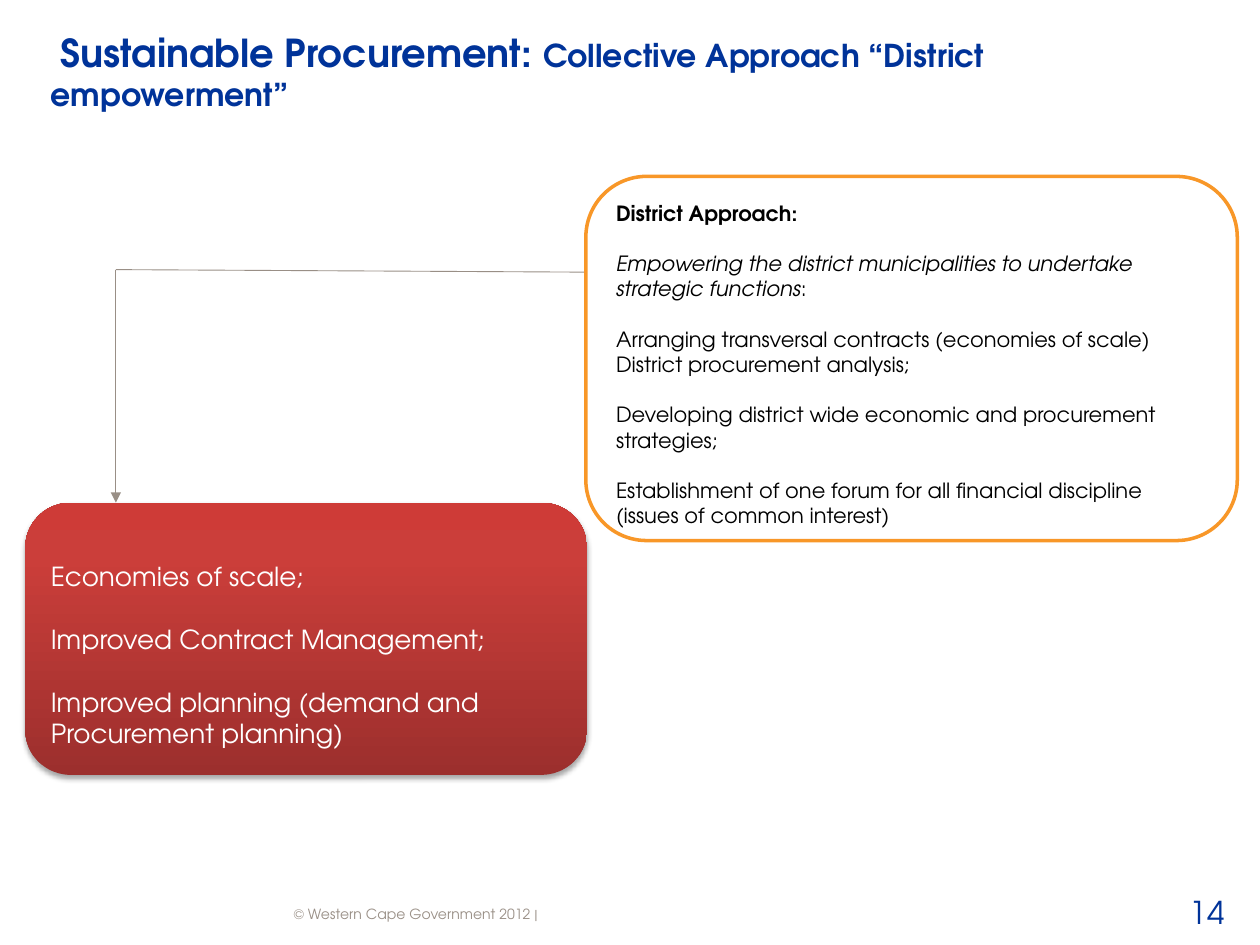
"""Build the district approach slide on sustainable procurement."""
from pptx import Presentation
from pptx.dml.color import RGBColor
from pptx.enum.shapes import MSO_CONNECTOR, MSO_SHAPE
from pptx.enum.text import MSO_ANCHOR as ANCHOR, PP_ALIGN as ALIGN
from pptx.oxml import parse_xml
from pptx.oxml.ns import nsdecls
from pptx.util import Inches, Pt

FONT = "TeX Gyre Adventor"
COLORS = {
    "blue": "003399",
    "gray": "998F86",
    "orange": "F89728",
    "white": "FFFFFF",
    "black": "000000",
    "red_dark": "9C2F2D",
    "red_mid": "CB3E3A",
    "red_light": "CE3B37",
}


def rgb(name):
    return RGBColor.from_string(COLORS[name])


def write(shape, paragraphs, size, color, anchor, margins, gap=0):
    """Fill a shape; each paragraph is (gap before?, [(text, style), ...])."""
    frame = shape.text_frame
    frame.word_wrap = True
    frame.vertical_anchor = anchor
    frame.margin_left, frame.margin_top, frame.margin_right, frame.margin_bottom = (
        Inches(margin) for margin in margins)
    for index, (spaced, runs) in enumerate(paragraphs):
        paragraph = frame.paragraphs[0] if index == 0 else frame.add_paragraph()
        paragraph.alignment = ALIGN.LEFT
        if spaced:
            paragraph.space_before = Pt(gap)
        for text, style in runs:
            run = paragraph.add_run()
            run.text = text
            run.font.name = FONT
            run.font.size = Pt(size)
            run.font.color.rgb = rgb(color)
            run.font.bold = style == "bold"
            run.font.italic = style == "italic"


presentation = Presentation()
presentation.slide_width = Inches(10)
presentation.slide_height = Inches(7.5)
slide = presentation.slides.add_slide(presentation.slide_layouts[6])
shapes = slide.shapes

footer = shapes.add_textbox(Inches(2.25), Inches(7.07), Inches(2.13), Inches(0.25))
write(footer, [(False, [("© Western Cape Government 2012 |", "")])],
      8, "gray", ANCHOR.BOTTOM, (0.08, 0.08, 0, 0))

title = shapes.add_textbox(Inches(0.32), Inches(0.26), Inches(9.4), Inches(0.61))
write(title, [(False, [("Sustainable Procurement: ", "bold"),
                       ("Collective Approach “District empowerment”", "bold")])],
      22, "blue", ANCHOR.MIDDLE, (0.08, 0.08, 0.08, 0.08))
title_paragraph = title.text_frame.paragraphs[0]
title_paragraph.runs[1].font.size = Pt(18)
title_paragraph._p.get_or_add_pPr().set("indent", str(Inches(0.08)))

page_number = shapes.add_textbox(Inches(9.16), Inches(7.07), Inches(0.56), Inches(0.25))
write(page_number, [(False, [("14", "")])],
      18, "blue", ANCHOR.MIDDLE, (0.08, 0.08, 0, 0))
page_number.text_frame.paragraphs[0].alignment = ALIGN.RIGHT

benefits = shapes.add_shape(MSO_SHAPE.ROUNDED_RECTANGLE,
                            Inches(0.2), Inches(3.99), Inches(4.46), Inches(2.16))
stops = "".join(
    f'<a:gs pos="{position * 1000}"><a:srgbClr val="{COLORS[name]}"/></a:gs>'
    for position, name in ((0, "red_dark"), (80, "red_mid"), (100, "red_light")))
benefits_properties = benefits._element.spPr
benefits_properties.append(parse_xml(
    f'<a:gradFill {nsdecls("a")} rotWithShape="1"><a:gsLst>{stops}</a:gsLst>'
    '<a:lin ang="16200000" scaled="0"/></a:gradFill>'))
benefits.line.fill.background()
benefits_properties.append(parse_xml(
    f'<a:effectLst {nsdecls("a")}><a:outerShdw blurRad="{Pt(3.1)}" dist="{Pt(1.8)}" '
    f'dir="5400000" rotWithShape="0"><a:srgbClr val="{COLORS["black"]}">'
    '<a:alpha val="35000"/></a:srgbClr></a:outerShdw></a:effectLst>'))
write(benefits, [
    (False, [("Economies of scale;", "")]),
    (True, [("Improved Contract Management;", "")]),
    (True, [("Improved planning (demand and Procurement planning)", "")]),
], 15, "white", ANCHOR.MIDDLE, (0.1, 0.3, 0.1, 0.05), gap=18)

for start, end, has_arrow in (((4.65, 2.16), (0.92, 2.14), False),
                              ((0.92, 2.14), (0.92, 3.99), True)):
    connector = shapes.add_connector(
        MSO_CONNECTOR.STRAIGHT, *(Inches(value) for value in start + end))
    connector.line.color.rgb = rgb("gray")
    connector.line.width = Pt(0.5)
    if has_arrow:
        connector.line._get_or_add_ln().append(
            parse_xml(f'<a:tailEnd {nsdecls("a")} type="triangle"/>'))
    connector._element.spPr.append(parse_xml(f'<a:effectLst {nsdecls("a")}/>'))

approach = shapes.add_shape(MSO_SHAPE.ROUNDED_RECTANGLE,
                            Inches(4.65), Inches(1.4), Inches(5.17), Inches(2.89))
approach.shadow.inherit = False
approach.fill.solid()
approach.fill.fore_color.rgb = rgb("white")
approach.line.color.rgb = rgb("orange")
approach.line.width = Pt(2)
write(approach, [
    (False, [("District Approach:", "bold")]),
    (True, [("Empowering the district municipalities to undertake strategic functions",
             "italic"), (":", "")]),
    (True, [("Arranging transversal contracts (economies of scale)", "")]),
    (False, [("District procurement analysis;", "")]),
    (True, [("Developing district wide economic and procurement strategies;", "")]),
    (True, [("Establishment of one forum for all financial discipline "
             "(issues of common interest)", "")]),
], 12, "black", ANCHOR.TOP, (0.1, 0.05, 0.1, 0.05), gap=14.4)

presentation.save("out.pptx")
